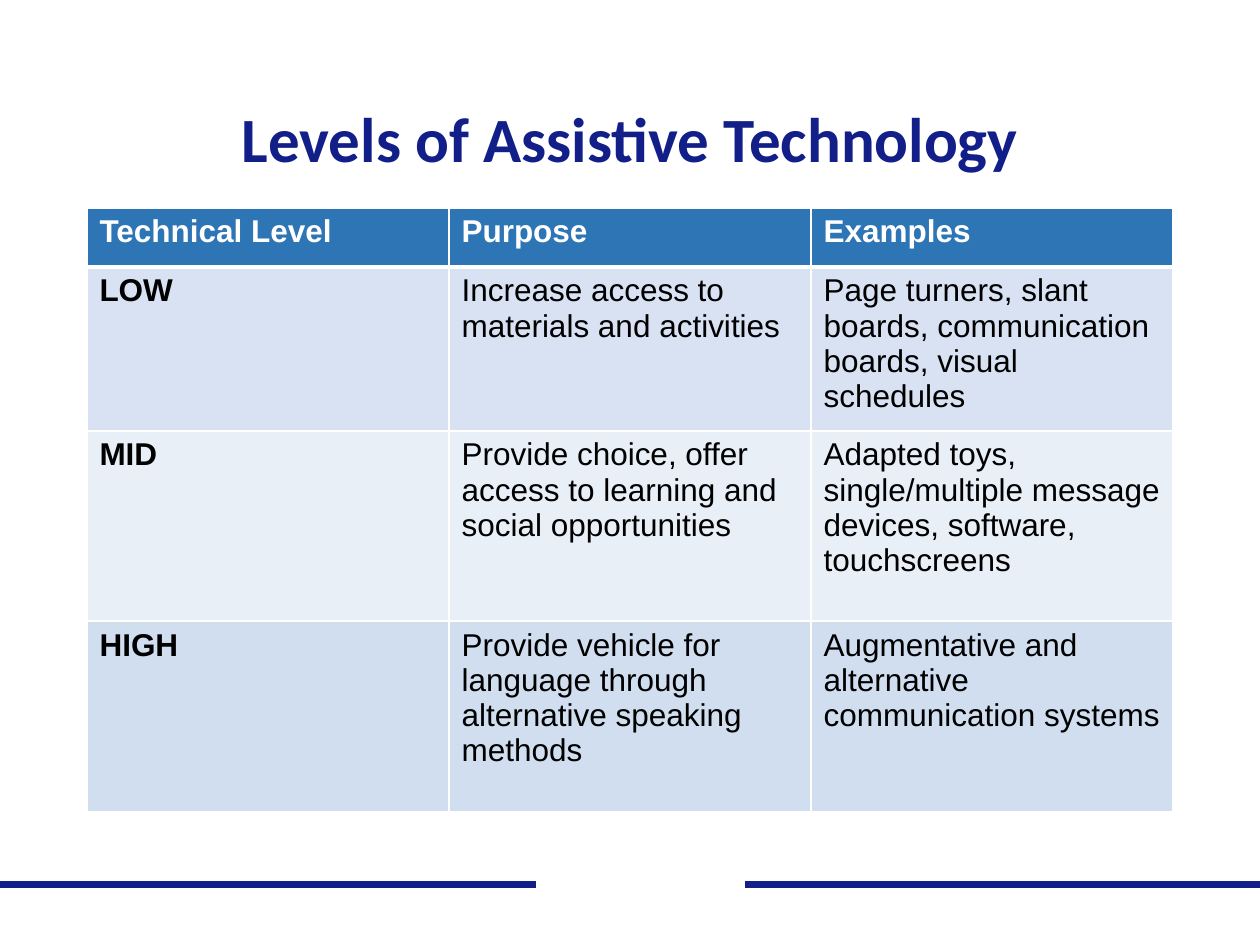
from lxml import etree
from pptx import Presentation
from pptx.dml.color import RGBColor
from pptx.enum.shapes import MSO_CONNECTOR
from pptx.enum.text import MSO_ANCHOR, PP_ALIGN
from pptx.oxml.ns import qn
from pptx.util import Inches, Pt

NAVY = RGBColor(0x12, 0x1F, 0x88)
WHITE = RGBColor(0xFF, 0xFF, 0xFF)
BLACK = RGBColor(0x00, 0x00, 0x00)
HEADER_BLUE = RGBColor(0x2E, 0x75, 0xB5)
ROW_FILLS = [
    HEADER_BLUE,
    RGBColor(0xD8, 0xE2, 0xF3),
    RGBColor(0xE9, 0xEF, 0xF7),
    RGBColor(0xD0, 0xDE, 0xEF),
]
ROW_HEIGHTS = [0.47, 1.16, 1.51, 1.51]
LEVELS = [
    ("Technical Level", "Purpose", "Examples"),
    ("LOW", "Increase access to materials and activities",
     "Page turners, slant boards, communication boards, visual schedules"),
    ("MID", "Provide choice, offer access to learning and social opportunities",
     "Adapted toys, single/multiple message devices, software, touchscreens"),
    ("HIGH", "Provide vehicle for language through alternative speaking methods",
     "Augmentative and alternative communication systems"),
]


def write_text(frame, text, *, size, color, font="Arial", bold=False,
               align=PP_ALIGN.LEFT, spacing=None):
    para = frame.paragraphs[0]
    para.alignment = align
    para.line_spacing = spacing
    span = para.add_run()
    span.text = text
    span.font.name = font
    span.font.size = Pt(size)
    span.font.bold = bold
    span.font.color.rgb = color


def set_border(cell, side, width):
    line = etree.SubElement(cell._tc.get_or_add_tcPr(), qn(f"a:ln{side}"), w=str(Pt(width)))
    fill = etree.SubElement(line, qn("a:solidFill"))
    etree.SubElement(fill, qn("a:srgbClr"), val=str(WHITE))


def add_rule(page, start, end, y, color):
    rule = page.shapes.add_connector(
        MSO_CONNECTOR.STRAIGHT, Inches(start), Inches(y), Inches(end), Inches(y))
    rule.line.color.rgb = color
    rule.line.width = Pt(4.5)
    etree.SubElement(rule._element.spPr, qn("a:effectLst"))


def add_footer(page, left, y, width):
    add_rule(page, left, left + width, y, NAVY)
    add_rule(page, left + 4.25, left + 5.91, y, WHITE)


def add_title(page, left, top, width, height):
    box = page.shapes.add_textbox(Inches(left), Inches(top), Inches(width), Inches(height))
    frame = box.text_frame
    frame.word_wrap = True
    frame.vertical_anchor = MSO_ANCHOR.MIDDLE
    write_text(frame, "Levels of Assistive Technology", size=36, color=NAVY,
               font="Calibri", bold=True, align=PP_ALIGN.CENTER, spacing=0.9)


def add_levels_table(page, left, top, width):
    table = page.shapes.add_table(
        len(LEVELS), len(LEVELS[0]), Inches(left), Inches(top),
        Inches(width), Inches(sum(ROW_HEIGHTS))).table
    for column in table.columns:
        column.width = Inches(width / len(LEVELS[0]))
    for row_index, texts in enumerate(LEVELS):
        table.rows[row_index].height = Inches(ROW_HEIGHTS[row_index])
        is_header = row_index == 0
        widths = {"L": 1, "R": 1, "T": 3 if row_index == 1 else 1, "B": 3 if is_header else 1}
        for column_index, text in enumerate(texts):
            cell = table.cell(row_index, column_index)
            for side, border in widths.items():
                set_border(cell, side, border)
            cell.fill.solid()
            cell.fill.fore_color.rgb = ROW_FILLS[row_index]
            write_text(cell.text_frame, text, size=18,
                       color=WHITE if is_header else BLACK,
                       bold=is_header or column_index == 0)


def main():
    deck = Presentation()
    deck.slide_width = Inches(10)
    deck.slide_height = Inches(7.5)
    page = deck.slides.add_slide(deck.slide_layouts[6])
    add_footer(page, 0, 7.02, 10)
    add_title(page, 0.69, 0.4, 8.62, 1.45)
    add_levels_table(page, 0.69, 1.65, 8.62)
    deck.save("out.pptx")


if __name__ == "__main__":
    main()
